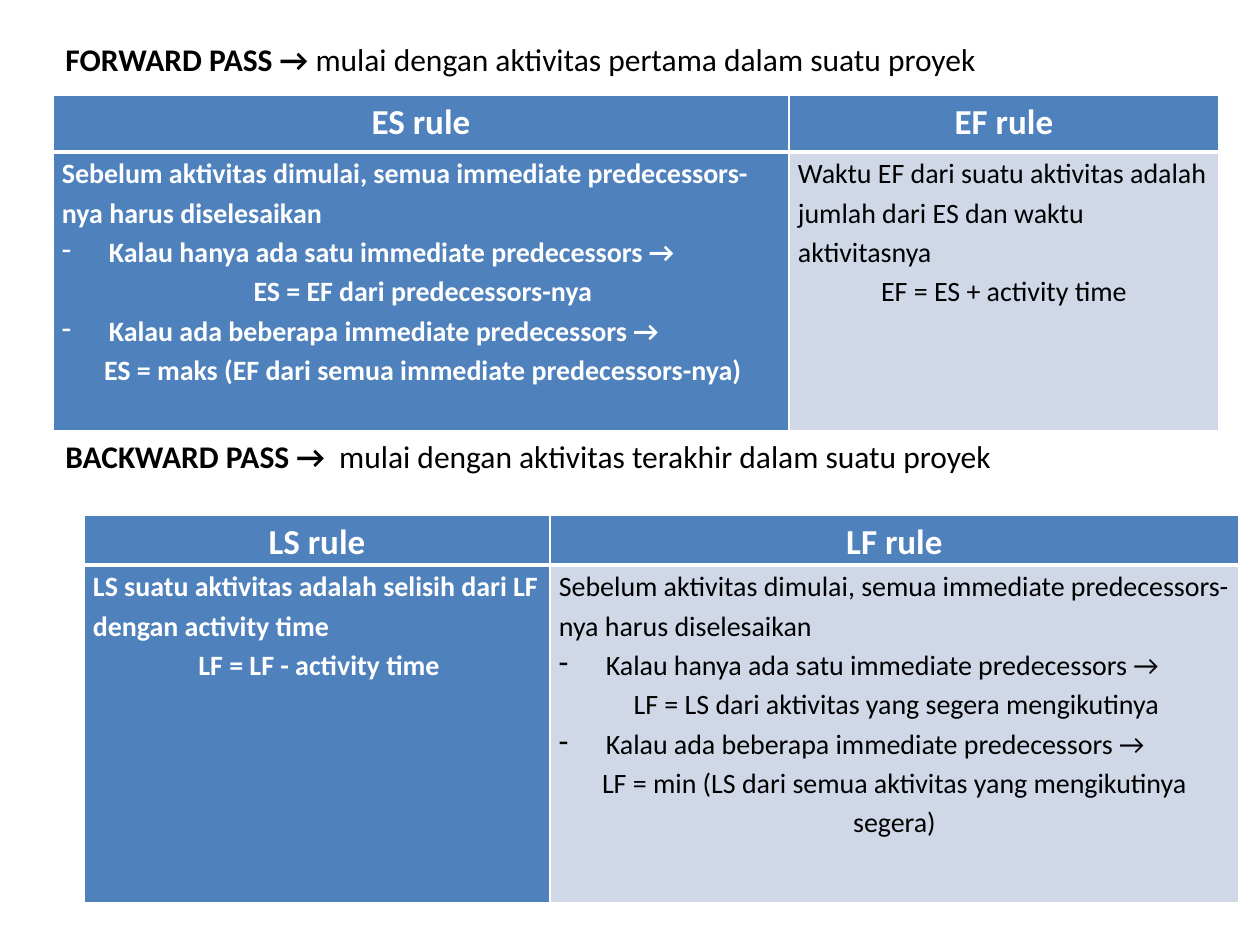
"""Build the slide on the forward pass and backward pass rules."""
from dataclasses import dataclass

from lxml import etree
from pptx import Presentation
from pptx import util as u
from pptx.dml import color
from pptx.enum import text
from pptx.oxml import ns

PX_PER_INCH = 126
FONT = "Calibri"
COLORS = {"blue": "4F81BD", "pale": "D0D8E8", "white": "FFFFFF", "black": "000000"}


@dataclass(frozen=True)
class Line:
    content: str
    centered: bool = False
    bullet: bool = False
    margin: int = 0


@dataclass(frozen=True)
class CellStyle:
    fill: str
    ink: str
    bold: bool
    size: int = 16
    bottom_border: int = 1


@dataclass(frozen=True)
class Heading:
    top: int
    title: str
    remark: str


@dataclass(frozen=True)
class RuleTable:
    left: int
    top: int
    columns: tuple[int, ...]
    rows: tuple[int, ...]
    titles: tuple[str, ...]
    bodies: tuple[tuple[Line, ...], ...]


HEADER = CellStyle("blue", "white", True, size=20, bottom_border=3)
BODIES = (CellStyle("blue", "white", True), CellStyle("pale", "black", False))

PREDECESSORS = Line("Sebelum aktivitas dimulai, semua immediate predecessors-nya harus diselesaikan")
SINGLE = Line("Kalau hanya ada satu immediate predecessors →", bullet=True)
SEVERAL = Line("Kalau ada beberapa immediate predecessors →", bullet=True)

HEADINGS = (
    Heading(34, "FORWARD PASS → ", "mulai dengan aktivitas pertama dalam suatu proyek"),
    Heading(431, "BACKWARD PASS → ", " mulai dengan aktivitas terakhir dalam suatu proyek"),
)
TABLES = (
    RuleTable(53, 95, (736, 430), (57, 279), ("ES rule", "EF rule"), (
        (
            PREDECESSORS,
            SINGLE,
            Line("ES = EF dari predecessors-nya", centered=True, margin=4),
            SEVERAL,
            Line("ES = maks (EF dari semua immediate predecessors-nya)", centered=True, margin=4),
        ),
        (
            Line("Waktu EF dari suatu aktivitas adalah jumlah dari ES dan waktu aktivitasnya"),
            Line("EF = ES + activity time", centered=True),
        ),
    )),
    RuleTable(84, 515, (466, 689), (50, 338), ("LS rule", "LF rule"), (
        (
            Line("LS suatu aktivitas adalah selisih dari LF dengan activity time"),
            Line("LF = LF - activity time", centered=True, margin=4),
        ),
        (
            PREDECESSORS,
            SINGLE,
            Line("LF = LS dari aktivitas yang segera mengikutinya", centered=True, margin=4),
            SEVERAL,
            Line("LF = min (LS dari semua aktivitas yang mengikutinya segera)", centered=True),
        ),
    )),
)


def px(length: int) -> u.Emu:
    """Turn pixels into EMU."""
    return u.Emu(round(length * u.Inches(1) / PX_PER_INCH))


def add_run(paragraph, content: str, size: int, ink: str, bold: bool) -> None:
    """Add one formatted run."""
    run = paragraph.add_run()
    run.text = content
    run.font.name = FONT
    run.font.size = u.Pt(size)
    run.font.bold = bold
    run.font.color.rgb = color.RGBColor.from_string(COLORS[ink])


def add_heading(slide, heading: Heading) -> None:
    """Add a bold title followed by its remark."""
    shape = slide.shapes.add_textbox(px(53), px(heading.top), px(1166), px(50))
    shape.text_frame.word_wrap = True
    paragraph = shape.text_frame.paragraphs[0]
    add_run(paragraph, heading.title, 18, "black", True)
    add_run(paragraph, heading.remark, 18, "black", False)


def add_line(paragraph, line: Line, style: CellStyle) -> None:
    """Write one paragraph of a cell."""
    paragraph.line_spacing = 1.15
    paragraph.alignment = text.PP_ALIGN.CENTER if line.centered else text.PP_ALIGN.LEFT
    properties = paragraph._p.get_or_add_pPr()
    properties.set("marL", str(px(47 if line.bullet else line.margin)))
    properties.set("indent", str(px(-47 if line.bullet else 0)))
    if line.bullet:
        etree.SubElement(properties, ns.qn("a:buChar"), char="-")
    add_run(paragraph, line.content, style.size, style.ink, style.bold)


def set_borders(cell, bottom: int) -> None:
    """Give the cell white borders with its own bottom width."""
    properties = cell._tc.get_or_add_tcPr()
    for side, width in (("L", 1), ("R", 1), ("T", 1), ("B", bottom)):
        border = etree.SubElement(properties, ns.qn(f"a:ln{side}"), w=str(u.Pt(width)))
        fill = etree.SubElement(border, ns.qn("a:solidFill"))
        etree.SubElement(fill, ns.qn("a:srgbClr"), val=COLORS["white"])


def fill_cell(cell, lines: tuple[Line, ...], style: CellStyle) -> None:
    """Style a cell and write its lines."""
    cell.margin_left = cell.margin_right = px(9)
    cell.margin_top = cell.margin_bottom = 0
    set_borders(cell, style.bottom_border)
    cell.fill.solid()
    cell.fill.fore_color.rgb = color.RGBColor.from_string(COLORS[style.fill])
    frame = cell.text_frame
    for index, line in enumerate(lines):
        paragraph = frame.add_paragraph() if index else frame.paragraphs[0]
        add_line(paragraph, line, style)


def add_rule_table(slide, rules: RuleTable) -> None:
    """Add a table with a title and a body for each rule."""
    shape = slide.shapes.add_table(
        len(rules.rows), len(rules.columns), px(rules.left), px(rules.top),
        px(sum(rules.columns)), px(sum(rules.rows)),
    )
    table = shape.table
    table.first_row = table.horz_banding = False
    for row, height in zip(table.rows, rules.rows):
        row.height = px(height)
    for index, width in enumerate(rules.columns):
        table.columns[index].width = px(width)
        fill_cell(table.cell(0, index), (Line(rules.titles[index], centered=True),), HEADER)
        fill_cell(table.cell(1, index), rules.bodies[index], BODIES[index])


def main() -> None:
    """Build and save the presentation."""
    presentation = Presentation()
    presentation.slide_width = px(1260)
    presentation.slide_height = px(945)
    slide = presentation.slides.add_slide(presentation.slide_layouts[6])
    for heading in HEADINGS:
        add_heading(slide, heading)
    for rules in TABLES:
        add_rule_table(slide, rules)
    presentation.save("out.pptx")


if __name__ == "__main__":
    main()
